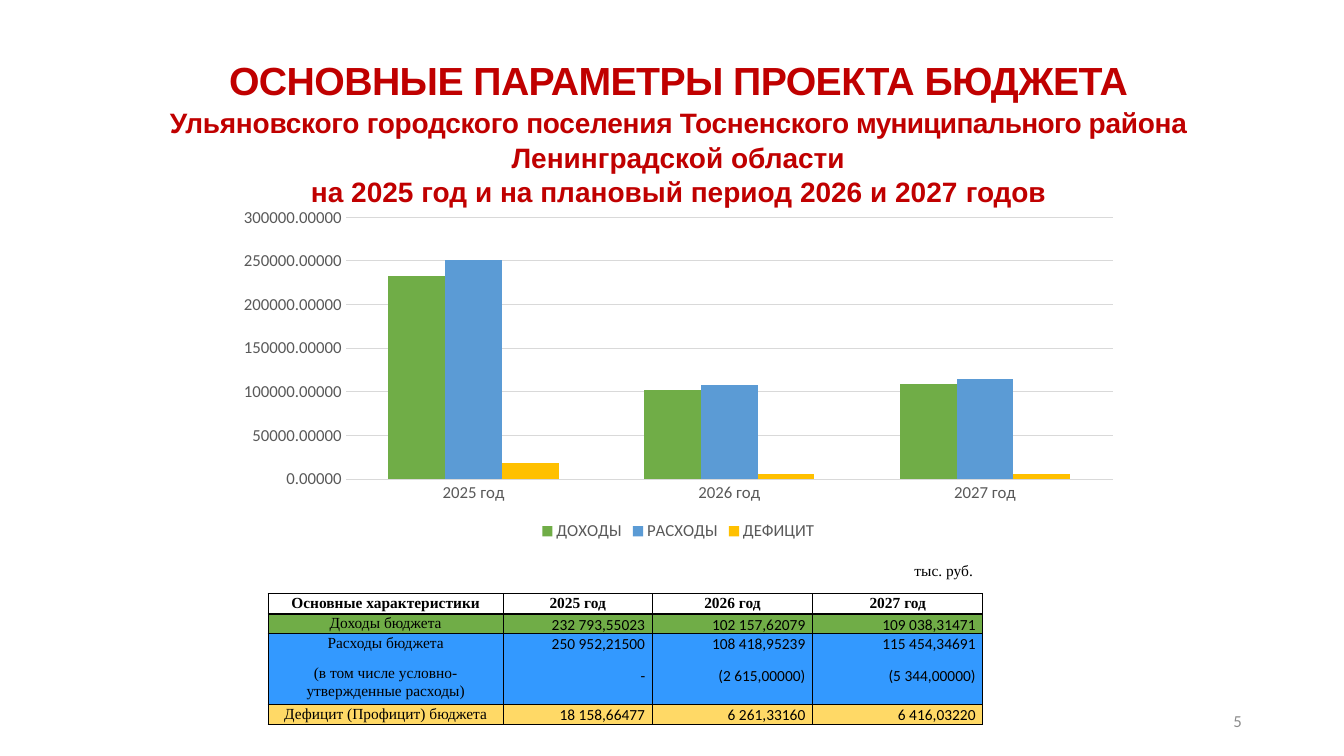
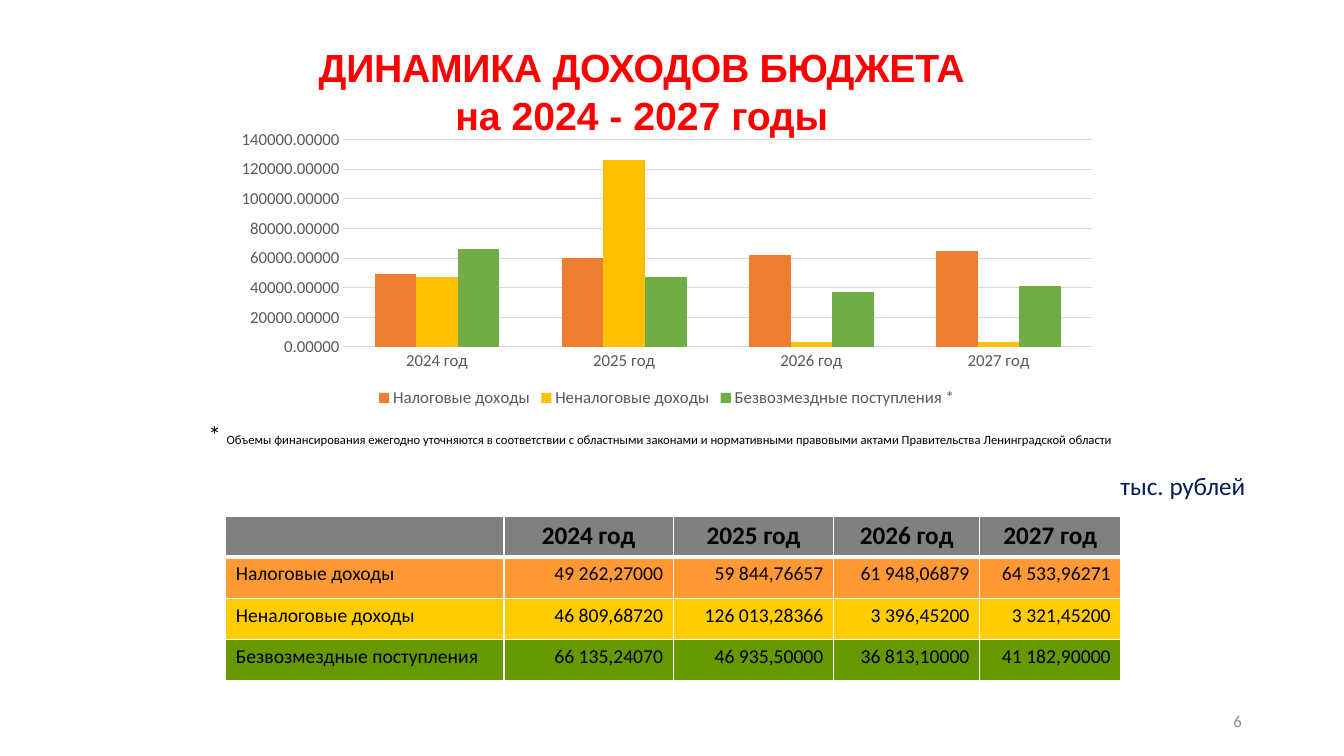
from collections import namedtuple

from lxml import etree
from pptx import Presentation
from pptx.chart.data import CategoryChartData
from pptx.dml.color import RGBColor
from pptx.enum.chart import XL_CHART_TYPE, XL_LEGEND_POSITION, XL_TICK_MARK
from pptx.enum.text import MSO_ANCHOR, PP_ALIGN
from pptx.oxml.ns import qn
from pptx.util import Cm, Pt

LEFT, CENTER, RIGHT = PP_ALIGN.LEFT, PP_ALIGN.CENTER, PP_ALIGN.RIGHT
TOP, MIDDLE = MSO_ANCHOR.TOP, MSO_ANCHOR.MIDDLE
COLUMNS = XL_CHART_TYPE.COLUMN_CLUSTERED
BOTTOM = XL_LEGEND_POSITION.BOTTOM
NO_TICK = XL_TICK_MARK.NONE

BODY, HEADING, SERIF = "Calibri", "Arial", "Times New Roman"
BLACK, WHITE, GRAY = "000000", "FFFFFF", "808080"
GREEN, BLUE, GOLD, ORANGE = "70AD47", "5B9BD5", "FFC000", "ED7D31"

Run = namedtuple("Run", "text spacing size", defaults=(0, None))
Para = namedtuple(
    "Para", "runs size font color bold align before after line",
    defaults=(BODY, BLACK, False, LEFT, 0, 0, None))


def rgb(value):
    return RGBColor.from_string(value)


class BudgetDeck:
    """Holds the shared style and the slide being built."""

    def __init__(self):
        self.deck = Presentation()
        self.deck.slide_width, self.deck.slide_height = Cm(33.87), Cm(19.05)
        self.slide = None

    def add_slide(self, number):
        self.slide = self.deck.slides.add_slide(self.deck.slide_layouts[6])
        page = Para([Run(number)], 12, color="8C8C8C", align=RIGHT)
        self.text((23.93, 17.65, 7.62, 1.02), [page], MIDDLE)

    def fill_frame(self, frame, paras):
        for index, para in enumerate(paras):
            line = frame.add_paragraph() if index else frame.paragraphs[0]
            line.alignment = para.align
            line.space_before, line.space_after = Pt(para.before), Pt(para.after)
            if para.line:
                line.line_spacing = para.line
            for part in para.runs:
                run = line.add_run()
                run.text = part.text
                run.font.name, run.font.bold = para.font, para.bold
                run.font.size = Pt(part.size or para.size)
                run.font.color.rgb = rgb(para.color)
                if part.spacing:
                    run._r.get_or_add_rPr().set("spc", str(round(part.spacing * 100)))

    def text(self, box, paras, anchor=TOP):
        frame = self.slide.shapes.add_textbox(*map(Cm, box)).text_frame
        frame.word_wrap, frame.vertical_anchor = True, anchor
        self.fill_frame(frame, paras)
        return frame

    def title(self, box, color, lines):
        paras = [Para(runs, size, HEADING, color, True, CENTER, before, line=spacing)
                 for runs, size, before, spacing in lines]
        frame = self.text(box, paras)
        frame.margin_left = frame.margin_right = 0
        frame.margin_top = Cm(0.23)

    def chart(self, box, years, series, top, step):
        data = CategoryChartData(number_format="0.00000")
        data.categories = years
        for name, values, _ in series:
            data.add_series(name, values)
        chart = self.slide.shapes.add_chart(COLUMNS, *map(Cm, box), data).chart
        chart.has_title = False
        chart.font.name, chart.font.size = BODY, Pt(12)
        chart.font.color.rgb = rgb("595959")
        chart.has_legend = True
        chart.legend.position, chart.legend.include_in_layout = BOTTOM, False
        for axis in (chart.category_axis, chart.value_axis):
            axis.major_tick_mark = axis.minor_tick_mark = NO_TICK
            axis.format.line.fill.background()
        scale = chart.value_axis
        scale.minimum_scale, scale.maximum_scale, scale.major_unit = 0, top, step
        scale.tick_labels.number_format = "0.00000"
        scale.tick_labels.number_format_is_linked = False
        grid = scale.major_gridlines.format.line
        grid.color.rgb, grid.width = rgb("D9D9D9"), Pt(0.75)
        plot = chart.plots[0]
        plot.gap_width, plot.overlap, plot.vary_by_categories = 150, 0, False
        for bars, (_, _, color) in zip(plot.series, series):
            bars.format.fill.solid()
            bars.format.fill.fore_color.rgb = rgb(color)

    def border(self, cell, color, bottom=1):
        properties = cell._tc.get_or_add_tcPr()
        for side, width in (("L", 1), ("R", 1), ("T", 1), ("B", bottom)):
            line = etree.SubElement(properties, qn(f"a:ln{side}"), w=str(Pt(width)))
            fill = etree.SubElement(line, qn("a:solidFill"))
            etree.SubElement(fill, qn("a:srgbClr"), val=color)

    def table(self, corner, widths, heights, rows, fills, border, header_line=1, margins=None):
        table = self.slide.shapes.add_table(
            len(rows), len(widths), *map(Cm, corner),
            Cm(sum(widths)), Cm(sum(heights))).table
        table.first_row = table.horz_banding = False
        for column, width in zip(table.columns, widths):
            column.width = Cm(width)
        for r, (cells, fill, height) in enumerate(zip(rows, fills, heights)):
            table.rows[r].height = Cm(height)
            for c, paras in enumerate(cells):
                cell = table.cell(r, c)
                if margins:
                    cell.margin_left = cell.margin_right = Cm(margins[0])
                    cell.margin_top = cell.margin_bottom = Cm(margins[1])
                self.border(cell, border, 1 if r else header_line)
                cell.fill.solid()
                cell.fill.fore_color.rgb = rgb(fill)
                self.fill_frame(cell.text_frame, paras)


def parameter_cell(lines, row, column):
    header, label = row == 0, column == 0
    font = SERIF if header or label else BODY
    align = CENTER if header or label else RIGHT
    last = len(lines) - 1
    return [Para([Run(line)], 11, font, bold=header, align=align,
                 after=8 if i < last else 0, line=1.07)
            for i, line in enumerate(lines)]


def income_cell(value, row, column):
    if not value:
        return []
    align = CENTER if row == 0 else RIGHT if column else LEFT
    return [Para([Run(value)], 14 if row else 18, bold=row == 0, align=align)]


def styled(rows, style):
    return [[style(value, r, c) for c, value in enumerate(row)]
            for r, row in enumerate(rows)]


def build_parameters(deck):
    deck.add_slide("5")
    deck.title((1.83, 1.19, 30.53, 4.11), "C00000", [
        ([Run("ОСНОВНЫЕ ПАРАМЕТРЫ ПРОЕКТА БЮДЖЕТА", -0.4)], 28, 0, None),
        ([Run("Ульяновского городского поселения Тосненского", -0.2),
          Run(" муниципального ", -0.5), Run("района ", -0.2),
          Run("Ленинградской области")], 20, 1, 1.03),
        ([Run("на 2025 год и на плановый период 2026 и 2027 "),
          Run("годов", -0.1)], 20, 0.1, None),
    ])
    years = ["2025 год", "2026 год", "2027 год"]
    deck.chart((5.69, 5.05, 22.81, 8.69), years, [
        ("ДОХОДЫ", (233000, 102000, 109000), GREEN),
        ("РАСХОДЫ", (251000, 108000, 115000), BLUE),
        ("ДЕФИЦИТ", (18000, 6000, 6000), GOLD),
    ], 300000, 50000)
    unit = Para([Run("тыс. руб.")], 11, SERIF, align=RIGHT)
    deck.text((6.76, 14, 18.01, 0.74), [unit], MIDDLE)
    rows = [
        [["Основные характеристики"], *([year] for year in years)],
        [["Доходы бюджета"], ["232 793,55023"], ["102 157,62079"], ["109 038,31471"]],
        [["Расходы бюджета", "(в том числе условно-утвержденные расходы)"],
         ["250 952,21500", "-"],
         ["108 418,95239", "(2 615,00000)"],
         ["115 454,34691", "(5 344,00000)"]],
        [["Дефицит (Профицит) бюджета"], ["18 158,66477"], ["6 261,33160"], ["6 416,03220"]],
    ]
    deck.table((6.76, 14.96), (5.92, 3.76, 4.04, 4.29), (0.51, 0.49, 1.78, 0.51),
               styled(rows, parameter_cell), (WHITE, GREEN, "3399FF", "FFD966"),
               BLACK, margins=(0.18, 0))


def build_income(deck):
    deck.add_slide("6")
    deck.title((7.7, 0.86, 16.94, 2.64), "FF0000", [
        ([Run("ДИНАМИКА ДОХОДОВ БЮДЖЕТА", -0.2)], 28, 0, None),
        ([Run("на 2024 - 2027 "), Run("годы", -0.2)], 28, 1, None),
    ])
    years = ["2024 год", "2025 год", "2026 год", "2027 год"]
    deck.chart((5.64, 3.12, 22.33, 7.26), years, [
        ("Налоговые доходы", (49000, 60000, 62000, 65000), ORANGE),
        ("Неналоговые доходы", (47000, 126000, 3000, 3000), GOLD),
        ("Безвозмездные поступления *", (66000, 47000, 37000, 41000), GREEN),
    ], 140000, 20000)
    footnote = ("Объемы финансирования ежегодно уточняются в соответствии с областными "
                "законами и нормативными правовыми актами Правительства Ленинградской области")
    deck.text((5, 10.44, 25.6, 1.02), [Para([Run("* "), Run(footnote, size=9)], 18)])
    unit = Para([Run("тыс. "), Run("рублей", -0.1)], 18, color="001F5F", align=RIGHT)
    deck.text((27.46, 11.73, 4.17, 1.02), [unit])
    rows = [
        ["", *years],
        ["Налоговые доходы", "49 262,27000", "59 844,76657", "61 948,06879", "64 533,96271"],
        ["Неналоговые доходы", "46 809,68720", "126 013,28366", "3 396,45200", "3 321,45200"],
        ["Безвозмездные поступления", "66 135,24070", "46 935,50000", "36 813,10000",
         "41 182,90000"],
    ]
    deck.table((5.69, 13), (7.01, 4.27, 4.04, 3.68, 3.56), [1.04] * len(rows),
               styled(rows, income_cell), (GRAY, "FF9933", "FFCC00", "669900"),
               WHITE, header_line=3)


def main():
    budget = BudgetDeck()
    build_parameters(budget)
    build_income(budget)
    budget.deck.save("out.pptx")


if __name__ == "__main__":
    main()
